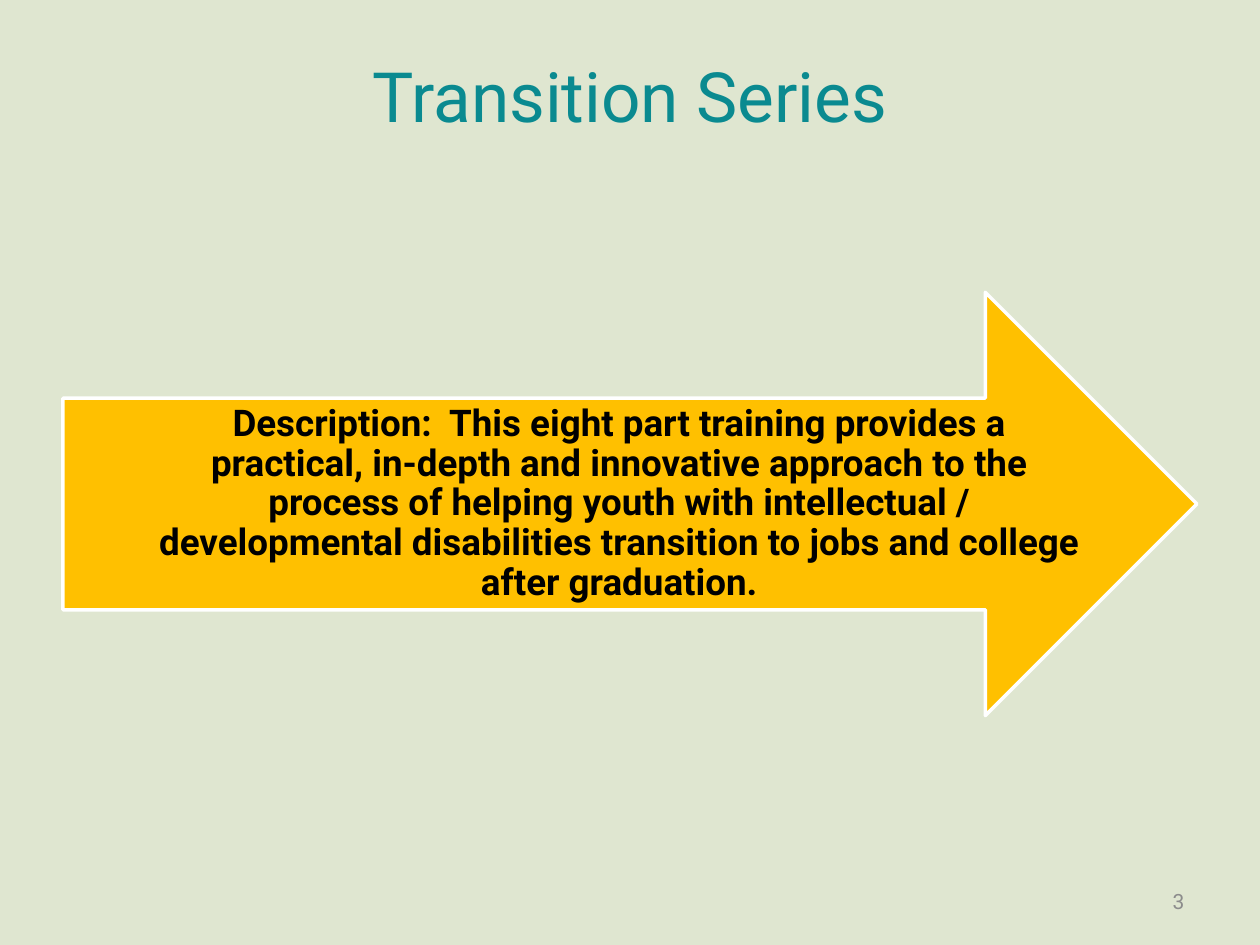
from dataclasses import dataclass

from pptx import Presentation
from pptx import util as u
from pptx.dml.color import RGBColor
from pptx.enum import shapes, text


@dataclass(frozen=True)
class Theme:
    font: str = "Roboto"
    background: str = "DFE6D0"
    title: str = "0A8A90"
    arrow: str = "FFC000"
    outline: str = "FFFFFF"
    body: str = "000000"
    number: str = "8C8C8C"
    title_size: float = 39.6
    body_size: float = 21
    number_size: float = 12


THEME = Theme()


def box(*lengths):
    return [u.Inches(length) for length in lengths]


def write(tf, words, size, color, align, anchor, bold=False):
    tf.word_wrap = True
    tf.auto_size = text.MSO_AUTO_SIZE.NONE
    tf.vertical_anchor = anchor
    p = tf.paragraphs[0]
    p.alignment = align
    r = p.add_run()
    r.text = words
    r.font.name = THEME.font
    r.font.size = u.Pt(size)
    r.font.bold = bold
    r.font.color.rgb = RGBColor.from_string(color)
    return p


def place_title(s, area, words):
    sp = s.shapes.title
    sp.left, sp.top, sp.width, sp.height = area
    sp.text_frame.margin_top = 0
    write(sp.text_frame, words, THEME.title_size, THEME.title,
          text.PP_ALIGN.CENTER, text.MSO_ANCHOR.TOP)


def add_description_arrow(s, area, words):
    left, top, width, height = area
    group = s.shapes.add_group_shape()

    # Arrow with its default half-height shaft
    arrow = group.shapes.add_shape(shapes.MSO_SHAPE.RIGHT_ARROW, *area)
    arrow.shadow.inherit = False
    arrow.fill.solid()
    arrow.fill.fore_color.rgb = RGBColor.from_string(THEME.arrow)
    arrow.line.color.rgb = RGBColor.from_string(THEME.outline)
    arrow.line.width = u.Pt(2)

    # Description over the shaft
    label = group.shapes.add_textbox(left + u.Inches(0.73), top + height // 4,
                                     width - u.Inches(1.63), height // 2)
    tf = label.text_frame
    tf.margin_left = tf.margin_right = 0
    tf.margin_top = tf.margin_bottom = u.Inches(0.23)
    p = write(tf, words, THEME.body_size, THEME.body,
              text.PP_ALIGN.CENTER, text.MSO_ANCHOR.MIDDLE, bold=True)
    p.line_spacing = 0.9


def add_slide_number(s, area, number):
    sp = s.shapes.add_textbox(*area)
    write(sp.text_frame, number, THEME.number_size, THEME.number,
          text.PP_ALIGN.RIGHT, text.MSO_ANCHOR.MIDDLE)


def main():
    prs = Presentation()
    prs.slide_width, prs.slide_height = box(10, 7.5)
    s = prs.slides.add_slide(prs.slide_layouts[5])
    s.background.fill.solid()
    s.background.fill.fore_color.rgb = RGBColor.from_string(THEME.background)

    place_title(s, box(0.5, 0.42, 9, 1.25), "Transition Series")
    add_description_arrow(
        s, box(0.5, 2.32, 9, 3.36),
        "Description:  This eight part training provides a practical, in-depth "
        "and innovative approach to the process of helping youth with "
        "intellectual / developmental disabilities transition to jobs and "
        "college after graduation.")
    add_slide_number(s, box(7.17, 6.95, 2.33, 0.4), "3")
    prs.save("out.pptx")


if __name__ == "__main__":
    main()
